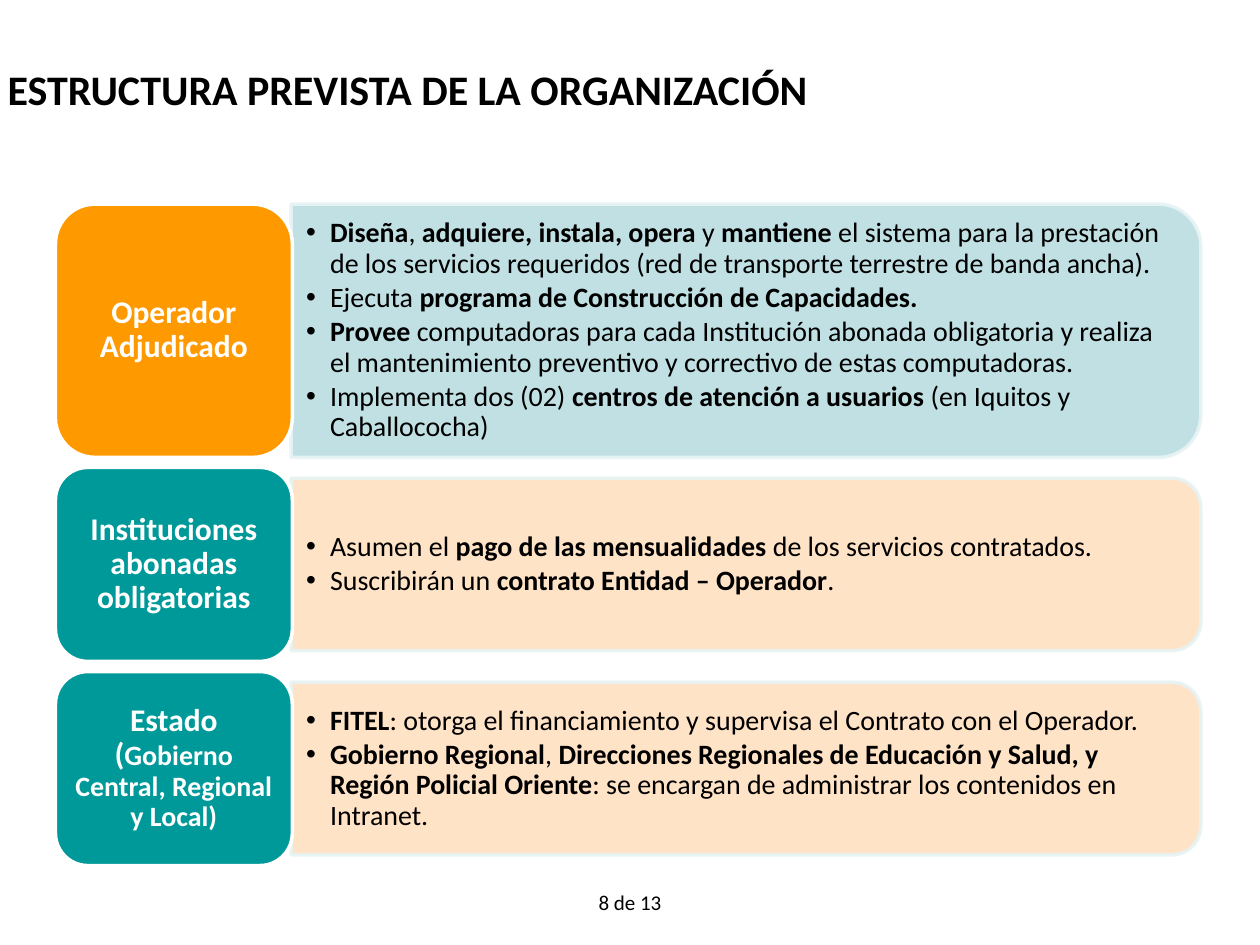
import pptx
import pptx.util
import pptx.oxml
import pptx.oxml.ns
from pptx.dml.color import RGBColor
from pptx.enum.shapes import MSO_SHAPE
from pptx.enum.text import MSO_ANCHOR, MSO_AUTO_SIZE, PP_ALIGN

Inches, Pt = pptx.util.Inches, pptx.util.Pt

THEME = {
    "font": "Calibri",
    "text": "000000", "white": "FFFFFF", "panel_line": "E7F3F4",
    "orange": "FF9900", "teal": "009999", "blue": "BADDE1", "peach": "FFE0C1",
    "title": 24, "label": 18, "body": 16, "page": 12,
}


def add_runs(p, text, size, color, bold=False):
    """Add text to a paragraph; each ** switches bold on or off."""
    for i, part in enumerate(text.split("**")):
        if part:
            r = p.add_run()
            r.text = part
            values = {"name": THEME["font"], "size": Pt(size), "bold": bold or i % 2 == 1}
            for key, value in values.items():
                setattr(r.font, key, value)
            r.font.color.rgb = RGBColor.from_string(color)


def format_frame(tf, left, top, anchor=MSO_ANCHOR.MIDDLE):
    """Set a wrapped frame with equal side margins and equal end margins."""
    values = {
        "word_wrap": True, "auto_size": MSO_AUTO_SIZE.NONE, "vertical_anchor": anchor,
        "margin_left": Inches(left), "margin_right": Inches(left),
        "margin_top": Inches(top), "margin_bottom": Inches(top),
    }
    for key, value in values.items():
        setattr(tf, key, value)


prs = pptx.Presentation()
prs.slide_width, prs.slide_height = Inches(10), Inches(7.5)
s = prs.slides.add_slide(prs.slide_layouts[4])
title, *bodies = s.placeholders

# Title
title.left, title.top, title.width, title.height = map(Inches, (-0.04, 0.08, 6.58, 1.25))
format_frame(title.text_frame, 0.1, 0.05)
p = title.text_frame.paragraphs[0]
p.alignment = PP_ALIGN.LEFT
add_runs(p, "ESTRUCTURA PREVISTA DE LA ORGANIZACIÓN", THEME["title"], THEME["text"], True)

# Rows: top, label height, panel height, list width, colours, label runs, list
rows = [
    (1.62, 2.01, 2.01, 7.12, "orange", "blue", [("Operador Adjudicado", "label")], [
        "**Diseña**, **adquiere, instala, opera** y **mantiene** el sistema para la prestación "
        "de los servicios requeridos (red de transporte terrestre de banda ancha).",
        "Ejecuta **programa de Construcción de Capacidades.**",
        "**Provee** computadoras para cada Institución abonada obligatoria y realiza "
        "el mantenimiento preventivo y correctivo de estas computadoras.",
        "Implementa dos (02) **centros de atención a usuarios **(en Iquitos y Caballococha)",
    ]),
    (3.71, 1.54, 1.37, 7.15, "teal", "peach",
     [("Instituciones abonadas obligatorias", "label")], [
        "Asumen el **pago de las mensualidades** de los servicios contratados.",
        "Suscribirán un **contrato Entidad – Operador**.",
    ]),
    (5.33, 1.54, 1.37, 7.15, "teal", "peach",
     [("Estado (", "label"), ("Gobierno Central, Regional y Local)", "body")], [
        "**FITEL**: otorga el financiamiento y supervisa el Contrato con el Operador.",
        "**Gobierno Regional**, **Direcciones Regionales de Educación y Salud, y "
        "Región Policial Oriente**: se encargan de administrar los contenidos en Intranet.",
    ]),
]
LABEL_LEFT, LABEL_W, PANEL_LEFT, PANEL_W = 0.44, 1.88, 2.31, 7.22

for body, row in zip(bodies, rows):
    top, label_h, panel_h, list_w, label_fill, panel_fill, label, items = row
    middle = top + label_h / 2

    # Panel: rounded at the top, turned a quarter to the right
    panel = s.shapes.add_shape(
        MSO_SHAPE.ROUND_2_SAME_RECTANGLE,
        Inches(PANEL_LEFT + (PANEL_W - panel_h) / 2), Inches(middle - PANEL_W / 2),
        Inches(panel_h), Inches(PANEL_W))
    panel.rotation = 90
    tab = s.shapes.add_shape(MSO_SHAPE.ROUNDED_RECTANGLE, Inches(LABEL_LEFT), Inches(top),
                             Inches(LABEL_W), Inches(label_h))
    for sp, fill, line in ((panel, panel_fill, "panel_line"), (tab, label_fill, "white")):
        sp.shadow.inherit = False
        sp.fill.solid()
        sp.fill.fore_color.rgb = RGBColor.from_string(THEME[fill])
        sp.line.color.rgb = RGBColor.from_string(THEME[line])
        sp.line.width = Pt(2)
    for color in panel.element.spPr.iter(pptx.oxml.ns.qn("a:srgbClr")):
        color.append(pptx.oxml.parse_xml(
            f'<a:alpha {pptx.oxml.ns.nsdecls("a")} val="90000"/>'))

    # Label
    format_frame(tab.text_frame, 0.07, 0.04)
    p = tab.text_frame.paragraphs[0]
    p.alignment, p.line_spacing = PP_ALIGN.CENTER, 0.9
    for text, size in label:
        add_runs(p, text, THEME[size], THEME["white"], True)

    # List, placed just above its panel
    panel.element.addnext(body.element)
    list_h = panel_h * 0.9
    body.left, body.top = Inches(PANEL_LEFT), Inches(middle - list_h / 2)
    body.width, body.height = Inches(list_w), Inches(list_h)
    tf = body.text_frame
    format_frame(tf, 0.12, 0.12)
    for i, item in enumerate(items):
        p = tf.add_paragraph() if i else tf.paragraphs[0]
        values = {"alignment": PP_ALIGN.LEFT, "line_spacing": 0.9,
                  "space_before": Pt(0), "space_after": Pt(2.4)}
        for key, value in values.items():
            setattr(p, key, value)
        pPr = p._p.get_or_add_pPr()
        pPr.set("marL", str(Inches(0.19)))
        pPr.set("indent", str(Inches(-0.19)))
        for bullet in ('buFont {} typeface="Arial"', 'buChar {} char="•"'):
            pPr.append(pptx.oxml.parse_xml(
                f'<a:{bullet.format(pptx.oxml.ns.nsdecls("a"))}/>'))
        add_runs(p, item, THEME["body"], THEME["text"])

# Drop the placeholder left without a row
for body in bodies[len(rows):]:
    body.element.getparent().remove(body.element)

# Page number
sp = s.shapes.add_textbox(Inches(4.57), Inches(7.01), Inches(0.86), Inches(0.39))
format_frame(sp.text_frame, 0.1, 0.05, MSO_ANCHOR.TOP)
p = sp.text_frame.paragraphs[0]
p.alignment = PP_ALIGN.CENTER
add_runs(p, "8 de 13", THEME["page"], THEME["text"])

prs.save("out.pptx")
